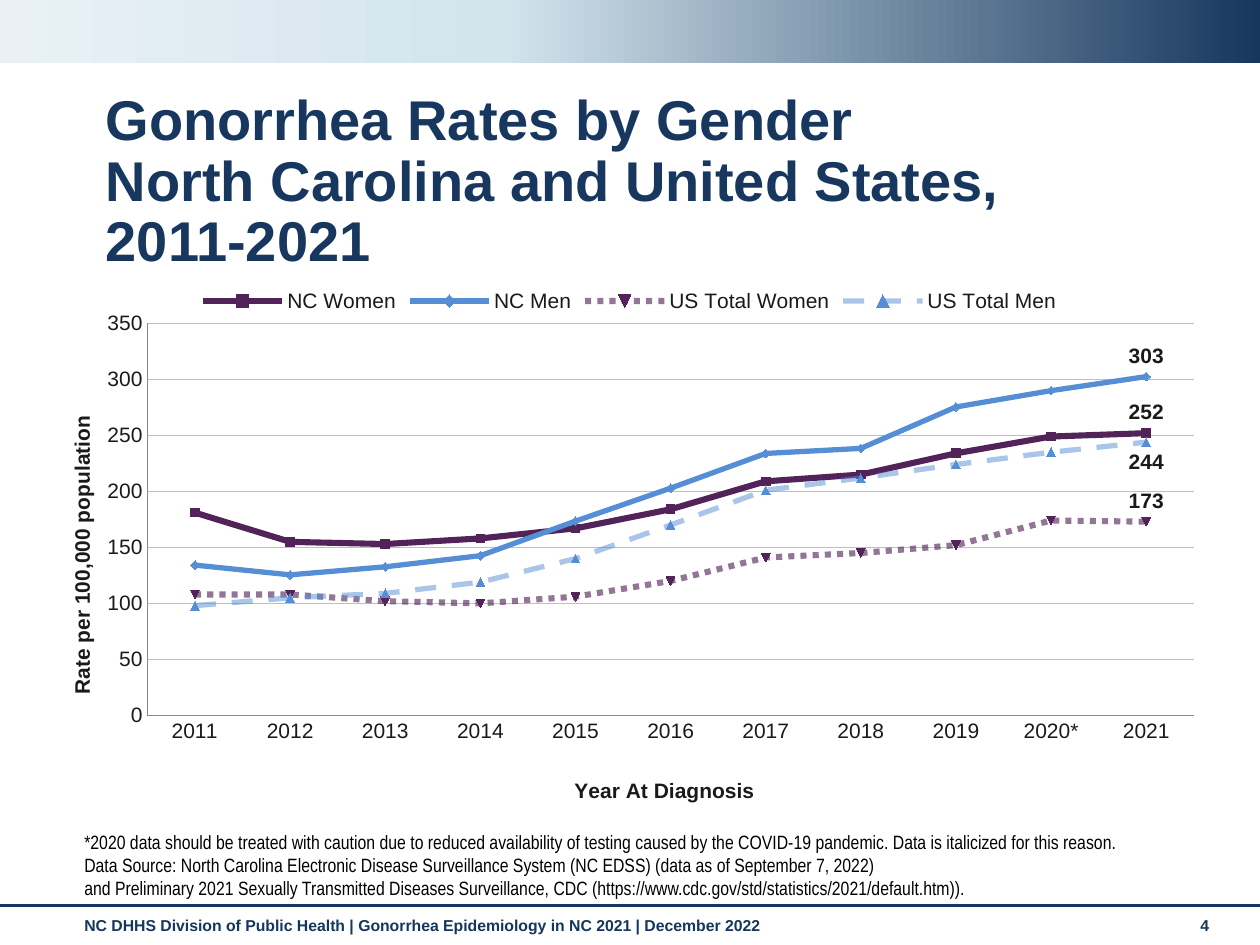
from copy import deepcopy
from dataclasses import dataclass

from lxml import etree
from pptx import Presentation
from pptx.chart.data import CategoryChartData
from pptx.dml.color import RGBColor
from pptx.enum.chart import (XL_CHART_TYPE, XL_LABEL_POSITION,
                             XL_LEGEND_POSITION, XL_TICK_MARK)
from pptx.enum.dml import MSO_LINE
from pptx.enum.shapes import MSO_CONNECTOR, MSO_SHAPE
from pptx.enum.text import MSO_ANCHOR, MSO_AUTO_SIZE
from pptx.oxml.ns import qn
from pptx.util import Cm, Pt

LINE = XL_CHART_TYPE.LINE
ABOVE, BELOW = XL_LABEL_POSITION.ABOVE, XL_LABEL_POSITION.BELOW
TOP = XL_LEGEND_POSITION.TOP
NO_TICK = XL_TICK_MARK.NONE
DOT, DASH = MSO_LINE.ROUND_DOT, MSO_LINE.DASH


@dataclass(frozen=True)
class Theme:
    navy: str = "17375E"
    foot: str = "15365E"
    ice: str = "D3E4ED"
    pale: str = "E9F1F6"
    plum: str = "522358"
    blue: str = "558ED5"
    ink: str = "1A1A1A"
    black: str = "000000"
    grid: str = "BFBFBF"
    axis: str = "898989"
    sans: str = "Arial"
    slim: str = "Arial Narrow"
    head: int = 32
    chart: int = 12
    note: int = 11
    small: int = 9


T = Theme()
YEARS = [str(year) for year in range(2011, 2020)] + ["2020*", "2021"]
# name, rates, colour, width, dash, opacity in percent, label side
RATES = [
    ("NC Women", (181, 155, 153, 158, 167, 184, 209, 215, 234, 249, 252),
     T.plum, 3.5, None, 100, ABOVE),
    ("NC Men", (134.2, 125.5, 132.7, 142.6, 173.5, 202.9, 233.9, 238.4,
                275.4, 290, 302.5),
     T.blue, 3, None, 100, ABOVE),
    ("US Total Women", (108, 108, 102, 100, 106, 120, 141, 145, 152, 174, 173),
     T.plum, 3.5, DOT, 62, ABOVE),
    ("US Total Men", (98, 105, 109, 119, 140, 170, 201, 212, 224, 235, 244),
     T.blue, 3, DASH, 50, BELOW),
]
NOTES = (
    "*2020 data should be treated with caution due to reduced availability of "
    "testing caused by the COVID-19 pandemic. Data is italicized for this reason.\n"
    "Data Source: North Carolina Electronic Disease Surveillance System "
    "(NC EDSS) (data as of September 7, 2022)\n"
    "and Preliminary 2021 Sexually Transmitted Diseases Surveillance, CDC "
    "(https://www.cdc.gov/std/statistics/2021/default.htm)).")


def rgb(code):
    return RGBColor.from_string(code)


def style(font, size, color, face=T.sans, bold=False):
    font.size, font.name, font.bold = Pt(size), face, bold
    font.color.rgb = rgb(color)


def write(shape, text, box, size, color, face=T.sans, bold=False,
          anchor=MSO_ANCHOR.TOP, space=None):
    """Place a text shape and fill it; a vertical tab breaks a line."""
    shape.left, shape.top, shape.width, shape.height = map(Cm, box)
    frame = shape.text_frame
    frame.word_wrap, frame.auto_size = True, MSO_AUTO_SIZE.NONE
    frame.vertical_anchor = anchor
    frame.text = text
    for para in frame.paragraphs:
        para.line_spacing = space
        for run in para.runs:
            style(run.font, size, color, face, bold)


def label(slide, text, box, **look):
    write(slide.shapes.add_textbox(0, 0, 0, 0), text, box, **look)


def banner(slide):
    bar = slide.shapes.add_shape(MSO_SHAPE.RECTANGLE, 0, 0, Cm(25.4), Cm(1.27))
    bar.shadow.inherit = False
    bar.line.fill.background()
    bar.fill.gradient()
    bar.fill.gradient_angle = 180
    stops = bar._element.spPr.find(".//" + qn("a:gsLst"))
    stops.append(deepcopy(stops[-1]))
    shades = ((0, T.navy), (0.6, T.ice), (1, T.pale))
    for stop, (place, shade) in zip(bar.fill.gradient_stops, shades):
        stop.position, stop.color.rgb = place, rgb(shade)


def rule(slide, y):
    line = slide.shapes.add_connector(MSO_CONNECTOR.STRAIGHT,
                                      0, Cm(y), Cm(25.4), Cm(y))
    line.line.color.rgb, line.line.width = rgb(T.navy), Pt(1.75)
    etree.SubElement(line._element.spPr, qn("a:effectLst"))


def layout(part, index, **sizes):
    """Give a chart part a manual layout in shares of the chart."""
    for old in part.findall(qn("c:layout")):
        part.remove(old)
    node = etree.Element(qn("c:layout"))
    part.insert(index, node)
    manual = etree.SubElement(node, qn("c:manualLayout"))
    modes = {"xMode": "edge", "yMode": "edge"}
    if "w" in sizes:
        modes = {"layoutTarget": "inner", **modes}
    for key, value in {**modes, **sizes}.items():
        etree.SubElement(manual, qn("c:" + key)).set("val", str(value))


def setup(axis, title, x, y):
    axis.major_tick_mark = axis.minor_tick_mark = NO_TICK
    axis.format.line.color.rgb = rgb(T.axis)
    frame = axis.axis_title.text_frame
    frame.text = title
    style(frame.paragraphs[0].runs[0].font, T.chart, T.ink, bold=True)
    layout(axis.axis_title._element, 1, x=x, y=y)


def draw(series, color, width, dash, alpha, side):
    """Format one line and label its last point."""
    series.smooth = False
    series.marker.style = None
    line = series.format.line
    line.color.rgb, line.width = rgb(color), Pt(width)
    if dash:
        line.dash_style = dash
    if alpha < 100:
        tint = series._element.find(".//" + qn("a:srgbClr"))
        etree.SubElement(tint, qn("a:alpha")).set("val", str(alpha * 1000))
    tag = series.points[len(YEARS) - 1].data_label
    style(tag.font, T.chart, T.ink, bold=True)
    tag.position = side


def graph(slide):
    data = CategoryChartData(number_format="#,##0")
    data.categories = YEARS
    for name, rates, *_ in RATES:
        data.add_series(name, rates)
    chart = slide.shapes.add_chart(LINE, Cm(0.84), Cm(5.56), Cm(23.7),
                                   Cm(10.74), data).chart
    style(chart.font, T.chart, T.ink)
    chart.has_title = False
    chart.has_legend = True
    chart.legend.position = TOP
    chart.legend.include_in_layout = False
    chart.plots[0].vary_by_categories = False
    layout(chart._chartSpace.chart.plotArea, 0, x=0.09, y=0.09, w=0.89, h=0.74)
    setup(chart.category_axis, "Year At Diagnosis", 0.45, 0.94)
    rate = chart.value_axis
    setup(rate, "Rate per 100,000 population", 0.02, 0.26)
    rate.minimum_scale, rate.maximum_scale, rate.major_unit = 0, 350, 50
    grid = rate.major_gridlines.format.line
    grid.color.rgb, grid.width = rgb(T.grid), Pt(0.75)
    for series, (_, _, *look) in zip(chart.plots[0].series, RATES):
        draw(series, *look)


def main():
    deck = Presentation()
    deck.slide_width, deck.slide_height = Cm(25.4), Cm(19.05)
    slide = deck.slides.add_slide(deck.slide_layouts[5])
    banner(slide)
    rule(slide, 18.26)
    foot = dict(size=T.small, color=T.foot, bold=True)
    label(slide, "NC DHHS Division of Public Health | Gonorrhea Epidemiology "
          "in NC 2021 | December 2022", (1.45, 18.34, 22.2, 0.74), **foot)
    label(slide, "4", (23.95, 18.34, 1.12, 0.76), **foot)
    title = slide.shapes.title
    write(title, "Gonorrhea Rates by Gender\vNorth Carolina and United States, "
          "\v2011-2021", (1.88, 1.73, 23.52, 1.52), size=T.head, color=T.navy,
          bold=True, space=0.9)
    for para in title.text_frame.paragraphs:
        para.alignment = 1
    graph(slide)
    label(slide, NOTES, (1.45, 17.35, 23.11, 0.91), size=T.note,
          color=T.black, face=T.slim, anchor=MSO_ANCHOR.BOTTOM)
    deck.save("out.pptx")


if __name__ == "__main__":
    main()
